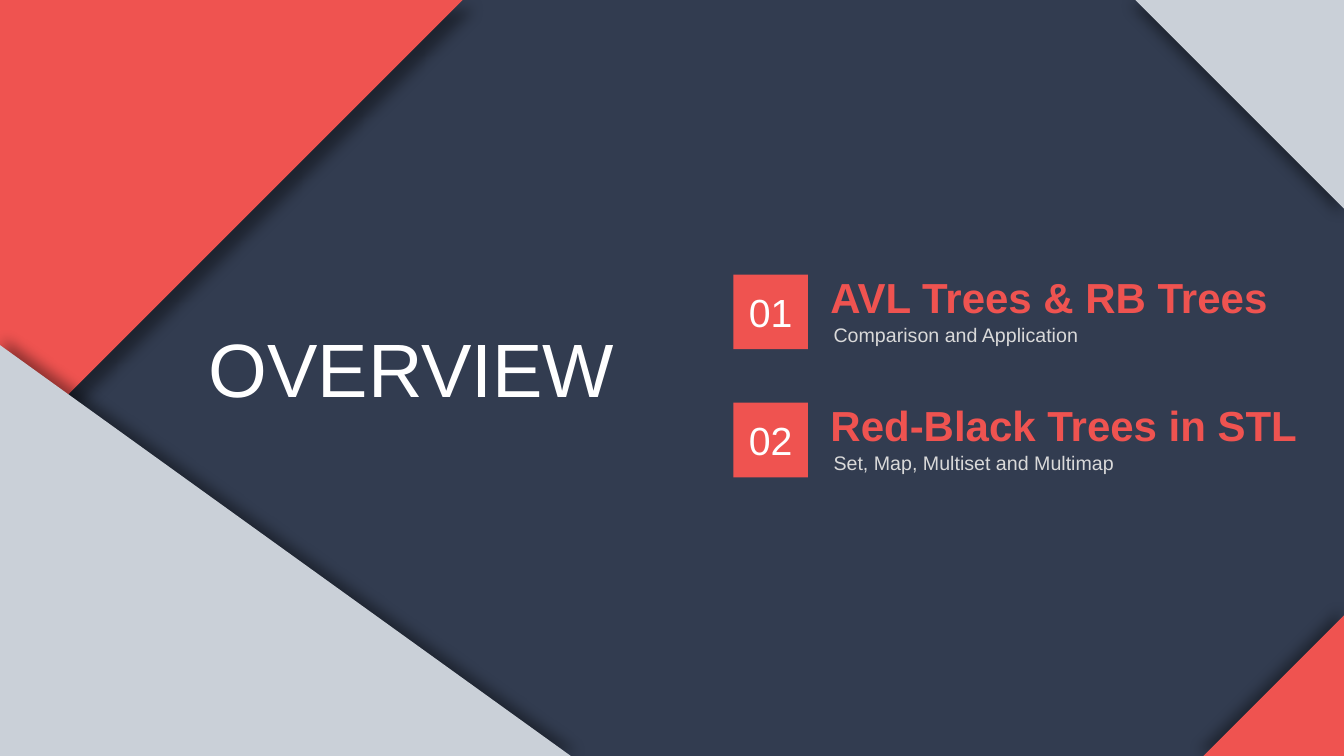
from dataclasses import dataclass

from lxml.etree import SubElement
from pptx import Presentation
from pptx.dml.color import RGBColor
from pptx.enum.shapes import MSO_SHAPE
from pptx.enum.text import MSO_ANCHOR, MSO_AUTO_SIZE, PP_ALIGN
from pptx.oxml.ns import qn
from pptx.shapes.autoshape import Shape
from pptx.slide import Slide
from pptx.util import Pt


@dataclass(frozen=True)
class Theme:
    font: str = "Arial"
    background: str = "323C50"
    accent: str = "EF5350"
    pale: str = "CAD0D8"
    white: str = "FFFFFF"
    muted: str = "D9D9D9"
    shadow: str = "000000"
    title_size: float = 54
    heading_size: float = 30
    number_size: float = 28
    detail_size: float = 14


@dataclass(frozen=True)
class Box:
    left: float
    top: float
    width: float
    height: float


@dataclass(frozen=True)
class Corner:
    box: Box
    color: str
    rotation: int
    flip: str
    shadow_distance: float
    shadow_angle: int


@dataclass(frozen=True)
class Topic:
    number: str
    heading: str
    detail: str


THEME = Theme()
CORNERS = [
    Corner(Box(810.9, 0, 149.1, 149.1), THEME.pale, 90, "flipV", 5, 135),
    Corner(Box(0, 0, 330.5, 330.5), THEME.accent, 0, "flipV", 10, 45),
    Corner(Box(859.5, 439.4, 100.6, 100.6), THEME.accent, 270, "", 5, 225),
    Corner(Box(57.1, 189.2, 293.8, 408.2), THEME.pale, 90, "flipH", 5, 315),
]
TOPICS = [
    Topic("01", "AVL Trees & RB Trees", "Comparison and Application"),
    Topic("02", "Red-Black Trees in STL", "Set, Map, Multiset and Multimap"),
]
TITLE_BOX = Box(140.4, 226.1, 307.4, 72.7)
TOPIC_TOP = 196.1
TOPIC_PITCH = 91.6
BADGE_LEFT = 523.9
BADGE_SIZE = 53.3
COMPARISON_LAYOUT = 4


def place(shape: Shape, box: Box) -> None:
    shape.left, shape.top = Pt(box.left), Pt(box.top)
    shape.width, shape.height = Pt(box.width), Pt(box.height)


def add_filled_shape(slide: Slide, kind: MSO_SHAPE, box: Box, color: str) -> Shape:
    shape = slide.shapes.add_shape(
        kind, Pt(box.left), Pt(box.top), Pt(box.width), Pt(box.height)
    )
    shape.shadow.inherit = False
    shape.fill.solid()
    shape.fill.fore_color.rgb = RGBColor.from_string(color)
    shape.line.fill.background()
    return shape


def write(
    shape: Shape, text: str, size: float, color: str, bold: bool = False,
    alignment: PP_ALIGN = PP_ALIGN.LEFT, anchor: MSO_ANCHOR = MSO_ANCHOR.TOP,
    wrap: bool = False,
) -> None:
    frame = shape.text_frame
    frame.text = text
    frame.word_wrap = wrap
    frame.auto_size = MSO_AUTO_SIZE.NONE
    frame.vertical_anchor = anchor
    paragraph = frame.paragraphs[0]
    paragraph.alignment = alignment
    paragraph.space_before = Pt(0)
    font = paragraph.runs[0].font
    font.name = THEME.font
    font.size = Pt(size)
    font.bold = bold
    font.color.rgb = RGBColor.from_string(color)


def remove_bullet(shape: Shape) -> None:
    properties = shape.text_frame.paragraphs[0]._p.get_or_add_pPr()
    properties.set("marL", "0")
    properties.set("indent", "0")
    SubElement(properties, qn("a:buNone"))


def add_corner(slide: Slide, corner: Corner) -> None:
    shape = add_filled_shape(
        slide, MSO_SHAPE.RIGHT_TRIANGLE, corner.box, corner.color
    )
    shape.rotation = corner.rotation
    properties = shape._element.spPr
    if corner.flip:
        properties.find(qn("a:xfrm")).set(corner.flip, "1")
    shadow = SubElement(
        properties.find(qn("a:effectLst")), qn("a:outerShdw"),
        blurRad=str(Pt(10)), dist=str(Pt(corner.shadow_distance)),
        dir=str(corner.shadow_angle * 60000), algn="ctr", rotWithShape="0",
    )
    color = SubElement(shadow, qn("a:srgbClr"), val=THEME.shadow)
    SubElement(color, qn("a:alpha"), val="40000")


def add_topic(
    slide: Slide, topic: Topic, top: float, heading: Shape, detail: Shape
) -> None:
    badge = add_filled_shape(
        slide, MSO_SHAPE.RECTANGLE,
        Box(BADGE_LEFT, top, BADGE_SIZE, BADGE_SIZE), THEME.accent,
    )
    write(badge, topic.number, THEME.number_size, THEME.white,
          alignment=PP_ALIGN.CENTER, anchor=MSO_ANCHOR.MIDDLE)
    place(heading, Box(586, top - 6, 360, 43.6))
    write(heading, topic.heading, THEME.heading_size, THEME.accent,
          bold=True, wrap=True)
    place(detail, Box(588.2, top + 30.6, 216, 24.2))
    write(detail, topic.detail, THEME.detail_size, THEME.muted)
    for shape in (heading, detail):
        remove_bullet(shape)


def main() -> None:
    presentation = Presentation()
    presentation.slide_width, presentation.slide_height = Pt(960), Pt(540)
    slide = presentation.slides.add_slide(
        presentation.slide_layouts[COMPARISON_LAYOUT]
    )
    slide.background.fill.solid()
    slide.background.fill.fore_color.rgb = RGBColor.from_string(THEME.background)

    for corner in CORNERS:
        add_corner(slide, corner)

    title = slide.shapes.title
    place(title, TITLE_BOX)
    write(title, "OVERVIEW", THEME.title_size, THEME.white,
          alignment=PP_ALIGN.CENTER)

    for index, topic in enumerate(TOPICS):
        heading = slide.placeholders[2 * index + 1]
        detail = slide.placeholders[2 * index + 2]
        add_topic(slide, topic, TOPIC_TOP + index * TOPIC_PITCH, heading, detail)

    presentation.save("out.pptx")


if __name__ == "__main__":
    main()
